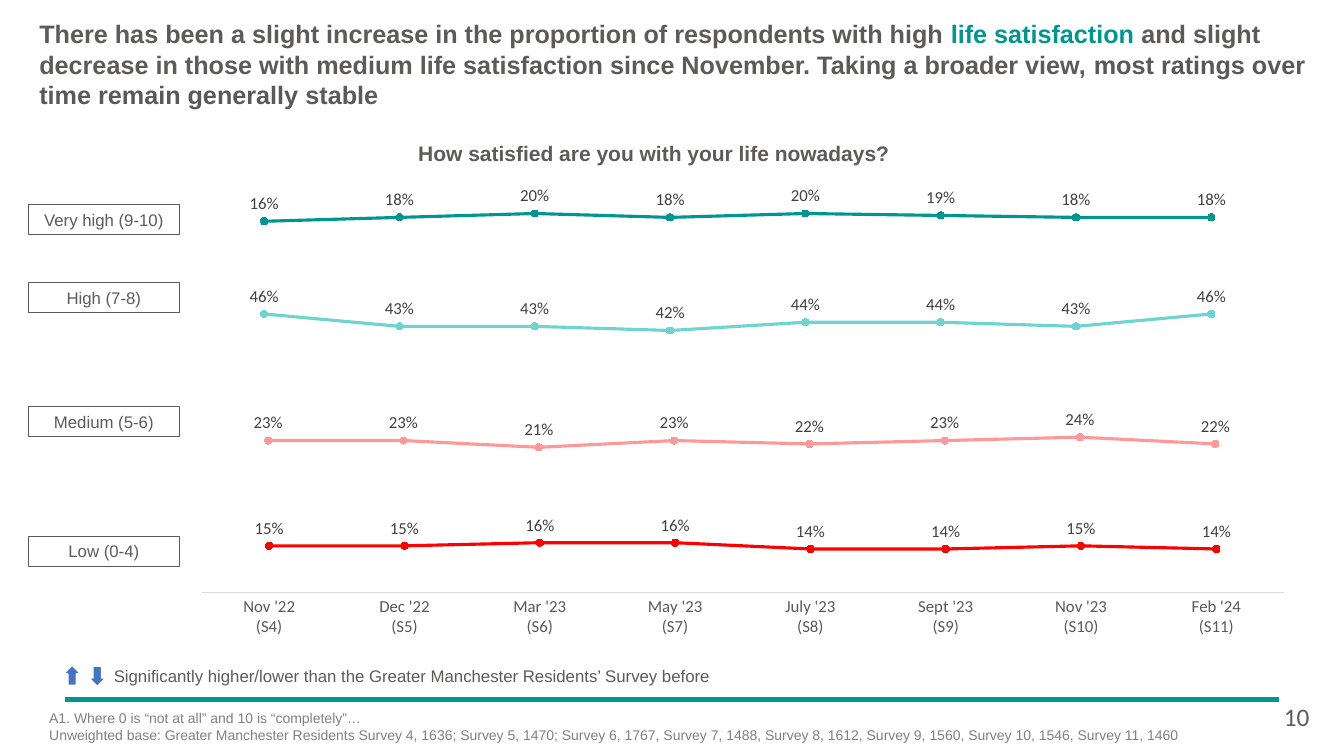
import pptx
import pptx.util
import pptx.chart.data
import pptx.dml.color
import pptx.enum.chart
import pptx.enum.shapes
import pptx.enum.text
import pptx.oxml
import pptx.oxml.ns

Pt = pptx.util.Pt
RGB = pptx.dml.color.RGBColor
ALIGN = pptx.enum.text.PP_ALIGN
ANCHOR = pptx.enum.text.MSO_ANCHOR
SHAPE = pptx.enum.shapes.MSO_SHAPE

TEAL = RGB(0x00, 0x96, 0x90)
AQUA = RGB(0x6D, 0xD5, 0xCE)
PINK = RGB(0xFF, 0x99, 0x99)
RED = RGB(0xFF, 0x00, 0x00)
GREY = RGB(0x5C, 0x5B, 0x5A)
AXIS_TEXT = RGB(0x59, 0x59, 0x59)
LABEL_TEXT = RGB(0x40, 0x40, 0x40)
AXIS_LINE = RGB(0xD9, 0xD9, 0xD9)
NOTE_GREY = RGB(0x80, 0x80, 0x80)
BLUE = RGB(0x44, 0x72, 0xC4)
WHITE = RGB(0xFF, 0xFF, 0xFF)

# Content
HEADLINE = [
    ("There has been a slight increase in the proportion of respondents with high ", GREY),
    ("life satisfaction ", TEAL),
    ("and slight decrease in those with medium life satisfaction since November. "
     "Taking a broader view, ", GREY),
    ("most ratings over time remain generally", AXIS_TEXT),
    (" stable", GREY),
]
QUESTION = "How satisfied are you with your life nowadays?"
WAVES = ["Nov '22\n(S4)", "Dec '22\n(S5)", "Mar '23\n(S6)", "May '23\n(S7)",
         "July '23\n(S8)", "Sept '23\n(S9)", "Nov '23\n(S10)", "Feb '24\n(S11)"]
# rating, percentages, colour, label top, chart (left, top, height),
# plot (top, height) as shares of the chart, axis minimum
RATINGS = [
    ("Very high (9-10)", [16, 18, 20, 18, 20, 19, 18, 18], TEAL, 146.2,
     (133.2, 99.4, 146.9), (0.078, 0.473), 0),
    ("High (7-8)", [46, 43, 43, 42, 44, 44, 43, 46], AQUA, 201.6,
     (133.2, 167, 146.9), (0.31, 0.241), 0.38),
    ("Medium (5-6)", [23, 23, 21, 23, 22, 23, 24, 22], PINK, 290.2,
     (136.1, 241.9, 213.1), (0.036, 0.566), 0),
    ("Low (0-4)", [15, 15, 16, 16, 14, 14, 15, 14], RED, 383,
     (136.8, 306, 213.1), (0.027, 0.524), 0),
]
CHART_WIDTH = 796.3
PLOT_LEFT, PLOT_WIDTH = 0.009, 0.971
ARROWS = [(63.4, 475.9, 0), (45.4, 475.2, 180)]
LEGEND = "Significantly higher/lower than the Greater Manchester Residents’ Survey before"
NOTES = [
    "A1. Where 0 is “not at all” and 10 is “completely”…",
    "Unweighted base: Greater Manchester Residents Survey 4, 1636; Survey 5, 1470; "
    "Survey 6, 1767, Survey 7, 1488, Survey 8, 1612, Survey 9, 1560, "
    "Survey 10, 1546, Survey 11, 1460",
]
PAGE = "10"


def style(font, size, color, name="Arial", bold=False):
    font.size, font.name, font.bold = Pt(size), name, bold
    font.color.rgb = color


def add_text(slide, box, lines, size, color, name="Arial", bold=False, wrap=True):
    frame = slide.shapes.add_textbox(*map(Pt, box)).text_frame
    frame.word_wrap = wrap
    frame.text = "\n".join(lines)
    for paragraph in frame.paragraphs:
        for run in paragraph.runs:
            style(run.font, size, color, name, bold)


def place_plot(chart, top, height):
    plot_area = chart._chartSpace.chart.plotArea
    for layout in plot_area.findall(pptx.oxml.ns.qn("c:layout")):
        plot_area.remove(layout)
    edges = {"x": PLOT_LEFT, "y": top, "w": PLOT_WIDTH, "h": height}
    modes = '<c:layoutTarget val="inner"/><c:xMode val="edge"/><c:yMode val="edge"/>'
    sizes = "".join(f'<c:{key} val="{share}"/>' for key, share in edges.items())
    plot_area.insert(0, pptx.oxml.parse_xml(
        f'<c:layout {pptx.oxml.ns.nsdecls("c")}><c:manualLayout>'
        f'{modes}{sizes}</c:manualLayout></c:layout>'))


def add_trend(slide, percentages, color, place, plot, minimum, show_waves):
    data = pptx.chart.data.CategoryChartData(number_format="0%")
    data.categories = WAVES
    data.add_series("Series 1", [value / 100 for value in percentages])
    left, top, height = place
    chart = slide.shapes.add_chart(
        pptx.enum.chart.XL_CHART_TYPE.LINE_MARKERS_STACKED,
        Pt(left), Pt(top), Pt(CHART_WIDTH), Pt(height), data).chart
    chart.has_title = chart.has_legend = False
    chart.font.size, chart.font.name = Pt(10), "Calibri"
    place_plot(chart, *plot)

    scale = chart.value_axis
    scale.minimum_scale, scale.maximum_scale = minimum, 0.5
    scale.has_major_gridlines = False
    scale.visible = False
    waves = chart.category_axis
    waves.visible = show_waves
    if show_waves:
        waves.major_tick_mark = pptx.enum.chart.XL_TICK_MARK.NONE
        waves.format.line.color.rgb = AXIS_LINE
        waves.format.line.width = Pt(0.75)
        style(waves.tick_labels.font, 12, AXIS_TEXT, "Calibri")

    chart.plots[0].vary_by_categories = False
    trend = chart.plots[0].series[0]
    trend.smooth = False
    trend.format.line.color.rgb = color
    trend.format.line.width = Pt(2.25)
    trend.marker.style = pptx.enum.chart.XL_MARKER_STYLE.CIRCLE
    trend.marker.size = 5
    trend.marker.format.fill.solid()
    trend.marker.format.fill.fore_color.rgb = color
    trend.marker.format.line.color.rgb = color
    labels = trend.data_labels
    labels.show_value = True
    labels.number_format, labels.number_format_is_linked = "0%", False
    labels.position = pptx.enum.chart.XL_LABEL_POSITION.ABOVE
    style(labels.font, 12, LABEL_TEXT, "Calibri")


def add_rating_label(slide, rating, top):
    label = slide.shapes.add_shape(SHAPE.RECTANGLE, Pt(20.2), Pt(top), Pt(108), Pt(21.6))
    label.shadow.inherit = False
    label.fill.background()
    label.line.color.rgb, label.line.width = GREY, Pt(0.75)
    frame = label.text_frame
    frame.text = rating
    frame.word_wrap = True
    frame.vertical_anchor = ANCHOR.MIDDLE
    frame.paragraphs[0].alignment = ALIGN.CENTER
    style(frame.paragraphs[0].runs[0].font, 12, GREY)


def main():
    deck = pptx.Presentation()
    deck.slide_width, deck.slide_height = Pt(960), Pt(540)
    slide = deck.slides.add_slide(deck.slide_layouts[5])

    # Footer rule
    rule = slide.shapes.add_connector(pptx.enum.shapes.MSO_CONNECTOR.STRAIGHT,
                                      Pt(46.1), Pt(499.7), Pt(913.7), Pt(499.7))
    rule.line.color.rgb, rule.line.width = TEAL, Pt(3)
    rule._element.spPr.append(
        pptx.oxml.parse_xml(f'<a:effectLst {pptx.oxml.ns.nsdecls("a")}/>'))

    # Headline
    headline = slide.shapes.title
    headline.left, headline.top = Pt(28.1), Pt(13)
    headline.width, headline.height = Pt(904.3), Pt(65.5)
    frame = headline.text_frame
    frame.auto_size = pptx.enum.text.MSO_AUTO_SIZE.NONE
    frame.word_wrap = True
    frame.vertical_anchor = ANCHOR.MIDDLE
    frame.margin_left = frame.margin_right = frame.margin_top = frame.margin_bottom = 0
    frame.paragraphs[0].alignment = ALIGN.LEFT
    for words, color in HEADLINE:
        run = frame.paragraphs[0].add_run()
        run.text = words
        style(run.font, 18, color, bold=True)

    add_text(slide, (291.6, 96.5, 354.2, 25.2), [QUESTION], 15, GREY, bold=True, wrap=False)

    # One trend and one label per rating; the lowest trend carries the wave names
    for rating, percentages, color, label_top, place, plot, minimum in RATINGS:
        add_trend(slide, percentages, color, place, plot, minimum,
                  show_waves=rating == RATINGS[-1][0])
    for rating, _, _, label_top, *_ in RATINGS:
        add_rating_label(slide, rating, label_top)

    # Significance legend
    for left, top, turn in ARROWS:
        arrow = slide.shapes.add_shape(SHAPE.DOWN_ARROW, Pt(left), Pt(top), Pt(12.2), Pt(14.4))
        arrow.rotation = turn
        arrow.shadow.inherit = False
        arrow.fill.solid()
        arrow.fill.fore_color.rgb = BLUE
        arrow.line.color.rgb, arrow.line.width = WHITE, Pt(1)
    add_text(slide, (74.2, 472.3, 442.1, 21.6), [LEGEND], 12, GREY, wrap=False)

    # Notes and page number
    add_text(slide, (28.1, 503.3, 835.2, 41.8), NOTES, 10, NOTE_GREY)
    add_text(slide, (910.1, 497.5, 38.2, 28.8), [PAGE], 18, GREY, "Calibri")

    deck.save("out.pptx")


if __name__ == "__main__":
    main()
